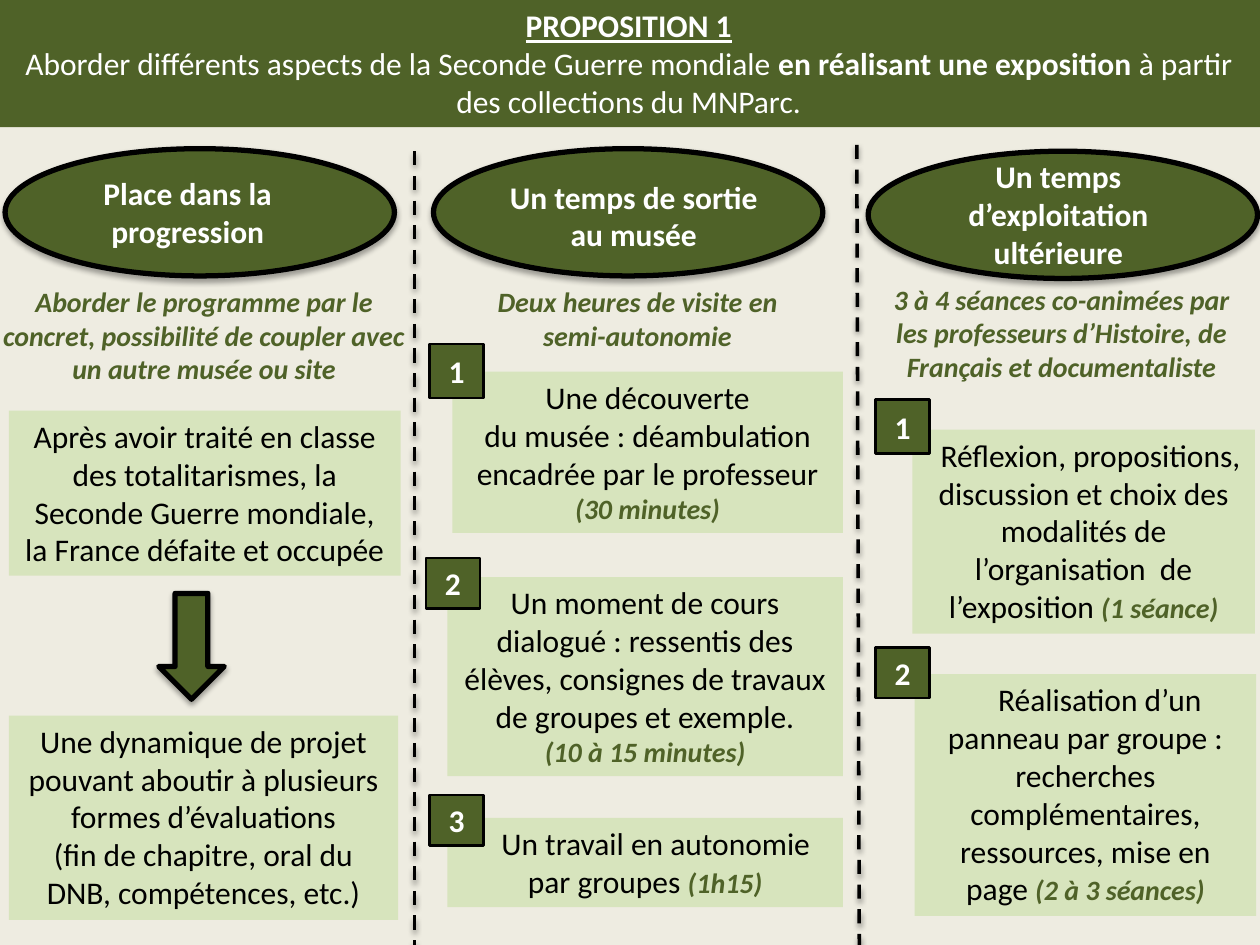
import pptx
import pptx.dml.color
import pptx.enum.dml
import pptx.enum.shapes
import pptx.enum.text
import pptx.oxml
import pptx.util
from pptx.util import Inches

HUES = {"cream": "EEECE1", "green": "4F6228", "pale": "D7E4BD",
        "black": "000000", "white": "FFFFFF"}
FORM = pptx.enum.shapes.MSO_SHAPE
ANCHOR = pptx.enum.text.MSO_ANCHOR
NS = 'xmlns:a="http://schemas.openxmlformats.org/drawingml/2006/main"'

# Run styles: size, colour, bold, italic, underline
PLAIN = (18, "black", False, False, False)
NOTE = (16, "green", True, True, False)
HEAD = (18, "white", True, False, False)
LIGHT = (18, "white", False, False, False)
TITLE = (18, "white", True, False, True)


def hue(name):
    return pptx.dml.color.RGBColor.from_string(HUES[name])


def write(shape, paras, anchor=ANCHOR.TOP, indent=0):
    """Fill a shape with centred paragraphs, each a list of (text, style)."""
    frame = shape.text_frame
    frame.word_wrap = True
    frame.auto_size = pptx.enum.text.MSO_AUTO_SIZE.NONE
    frame.vertical_anchor = anchor
    for i, runs in enumerate(paras):
        para = frame.add_paragraph() if i else frame.paragraphs[0]
        para.alignment = pptx.enum.text.PP_ALIGN.CENTER
        if indent:
            para._p.get_or_add_pPr().set("indent", str(Inches(indent)))
        for text, (size, tone, bold, slant, under) in runs:
            run = para.add_run()
            run.text = text
            font = run.font
            font.name, font.size = "Calibri", pptx.util.Pt(size)
            font.bold, font.italic, font.underline = bold, slant, under
            font.color.rgb = hue(tone)


def label(slide, box, paras):
    write(slide.shapes.add_textbox(*map(Inches, box)), paras)


def block(slide, form, box, fill, width=0):
    """Draw a flat filled shape, outlined in black if a width is given."""
    shape = slide.shapes.add_shape(form, *map(Inches, box))
    shape.shadow.inherit = False
    shape.fill.solid()
    shape.fill.fore_color.rgb = hue(fill)
    if width:
        shape.line.color.rgb = hue("black")
        shape.line.width = pptx.util.Pt(width)
    else:
        shape.line.fill.background()
    return shape


def shade(shape, alpha):
    """Give a shape or connector a soft shadow below it."""
    props = shape._element.spPr
    for old in props.findall(pptx.oxml.ns.qn("a:effectLst")):
        props.remove(old)
    props.append(pptx.oxml.parse_xml(
        f'<a:effectLst {NS}><a:outerShdw blurRad="39400" dist="22900" '
        f'dir="5400000" rotWithShape="0"><a:srgbClr val="{HUES["black"]}">'
        f'<a:alpha val="{alpha}000"/></a:srgbClr></a:outerShdw></a:effectLst>'))


def banner(slide, box):
    title = slide.shapes.title
    title.left, title.top, title.width, title.height = map(Inches, box)
    title.fill.solid()
    title.fill.fore_color.rgb = hue("green")
    write(title, [
        [("PROPOSITION 1", TITLE)],
        [("Aborder différents aspects de la Seconde Guerre mondiale ", LIGHT),
         ("en réalisant une exposition ", HEAD),
         ("à partir des collections du MNParc.", LIGHT)]])


def header(slide, left, top, lines, shift, note, area):
    """Draw an oval heading, its text shifted inside, and a note in its area."""
    oval = block(slide, FORM.OVAL, (left, top, 3.09, 1.01), "green", 3)
    shade(oval, 35)
    across, down = shift
    label(slide, (left + across, top + down, 2.58, 1.01 - 2 * down),
          [[(line, HEAD)] for line in lines])
    label(slide, area, [[(note, NOTE)]])


def card(slide, box, paras, indent=0):
    write(block(slide, FORM.RECTANGLE, box, "pale"), paras, indent=indent)


def step(slide, box, number, corner, paras, indent=0):
    """Draw a card with a numbered badge whose corner is relative to the card."""
    card(slide, box, paras, indent)
    across, down = corner
    high = 0.43 if number == 1 else 0.4
    badge = block(slide, FORM.RECTANGLE,
                  (box[0] + across, box[1] + down, 0.43, high), "green", 1.5)
    write(badge, [[(str(number), HEAD)]], ANCHOR.MIDDLE)


def divide(slide, start, end):
    line = slide.shapes.add_connector(
        pptx.enum.shapes.MSO_CONNECTOR.STRAIGHT, *map(Inches, start + end))
    line.line.color.rgb = hue("black")
    line.line.width = pptx.util.Pt(2)
    line.line.dash_style = pptx.enum.dml.MSO_LINE.DASH
    shade(line, 38)


def context(slide, left, top):
    header(slide, left, top, ["Place dans la progression"], (0.16, 0.15),
           "Aborder le programme par le concret, possibilité de coupler avec "
           "un autre musée ou site", (left - 0.15, top + 1.03, 3.46, 0.91))
    card(slide, (left + 0.03, top + 2.08, 3.11, 1.31), [
        [("Après avoir traité en classe des totalitarismes, la Seconde Guerre "
          "mondiale, la France défaite et occupée", PLAIN)]])
    arrow = block(slide, FORM.DOWN_ARROW,
                  (left + 1.22, top + 3.53, 0.52, 0.84), "green", 3)
    shade(arrow, 35)
    card(slide, (left + 0.03, top + 4.5, 3.09, 1.62), [
        [("Une dynamique de projet pouvant aboutir à plusieurs formes "
          "d’évaluations", PLAIN)],
        [("(fin de chapitre, oral du DNB, compétences, etc.)", PLAIN)]])


def visit(slide, left, top):
    header(slide, left, top, ["Un temps de sortie", "au musée"], (0.3, 0.18),
           "Deux heures de visite en semi-autonomie",
           (left + 0.15, top + 1.03, 2.94, 0.64))
    step(slide, (left + 0.15, top + 1.77, 3.1, 1.28), 1, (-0.18, -0.22), [
        [("Une découverte", PLAIN)],
        [("du musée : déambulation encadrée par le professeur", PLAIN)],
        [("(30 minutes)", NOTE)]])
    step(slide, (left + 0.11, top + 3.4, 3.14, 1.58), 2, (-0.17, -0.15), [
        [("Un moment de cours dialogué : ressentis des élèves, consignes de "
          "travaux de groupes et exemple.", PLAIN)],
        [("(10 à 15 minutes)", NOTE)]])
    step(slide, (left + 0.11, top + 5.31, 3.14, 0.71), 3, (-0.14, -0.18), [
        [("Un travail en autonomie par groupes ", PLAIN),
         ("(1h15)", NOTE)]], indent=0.17)


def follow(slide, left, top):
    header(slide, left, top, ["Un temps d’exploitation ultérieure"], (0.22, 0),
           "3 à 4 séances co-animées par les professeurs d’Histoire, de "
           "Français et documentaliste", (left, top + 0.99, 3.07, 0.91))
    step(slide, (left + 0.35, top + 2.21, 2.72, 1.62), 1, (-0.29, -0.24), [
        [("Réflexion, propositions, discussion et choix des modalités de "
          "l’organisation  de l’exposition ", PLAIN),
         ("(1 séance)", NOTE)]], indent=0.11)
    step(slide, (left + 0.37, top + 4.15, 2.71, 1.92), 2, (-0.31, -0.21), [
        [("Réalisation d’un panneau par groupe : recherches complémentaires, "
          "ressources, mise en page ", PLAIN),
         ("(2 à 3 séances)", NOTE)]], indent=0.23)


def main():
    deck = pptx.Presentation()
    deck.slide_width, deck.slide_height = Inches(10), Inches(7.5)
    slide = deck.slides.add_slide(deck.slide_layouts[5])
    slide.background.fill.solid()
    slide.background.fill.fore_color.rgb = hue("cream")
    banner(slide, (-0.02, 0, 10.02, 1.01))
    context(slide, 0.04, 1.18)
    visit(slide, 3.44, 1.18)
    follow(slide, 6.89, 1.2)
    divide(slide, (3.29, 1.2), (3.29, 7.5))
    divide(slide, (6.8, 1.15), (6.82, 7.5))
    deck.save("out.pptx")


if __name__ == "__main__":
    main()
